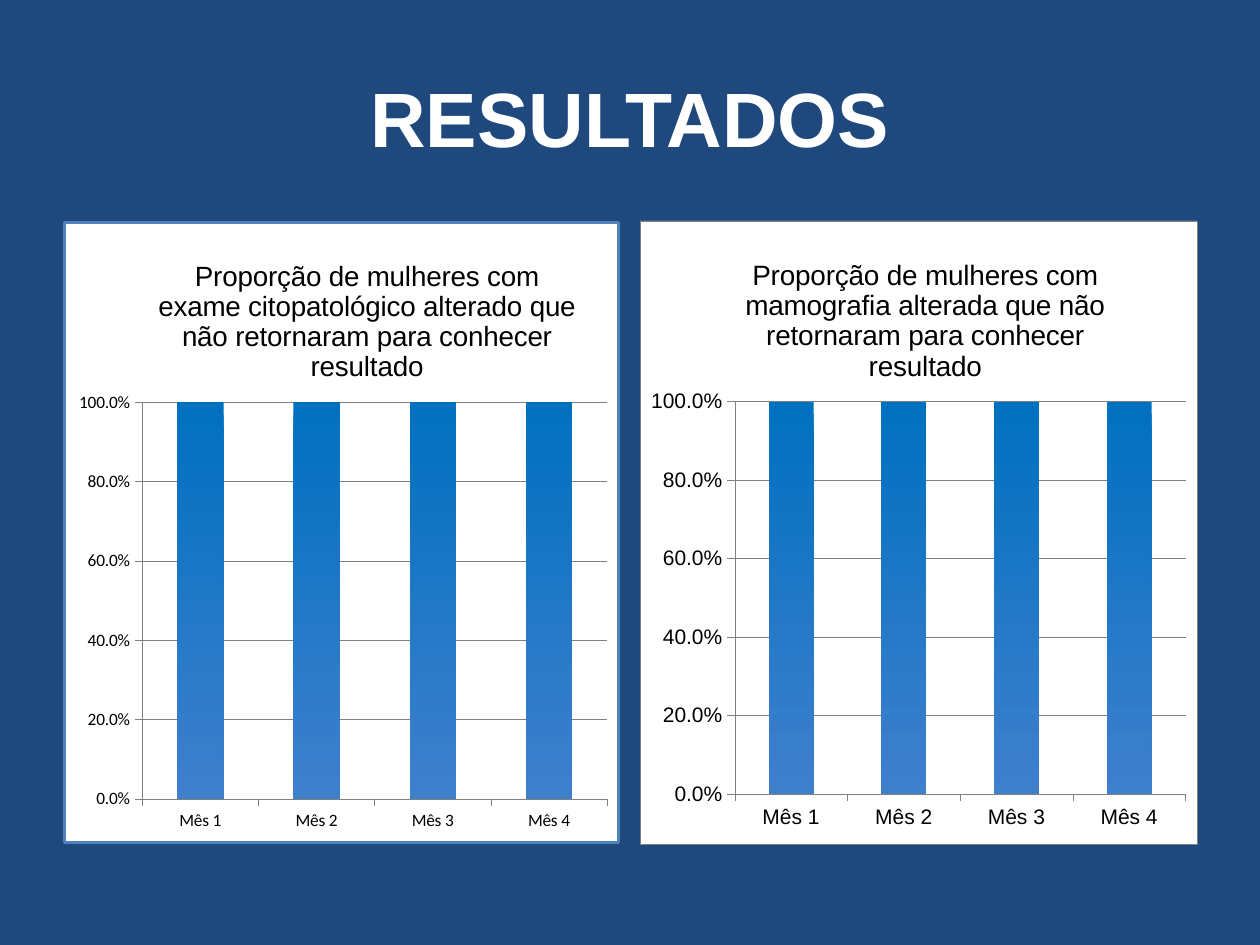
import pptx
import pptx.chart.data
import pptx.dml.color
import pptx.enum.chart
import pptx.enum.text
import pptx.oxml
import pptx.oxml.ns
import pptx.util
from pptx.util import Cm, Pt

NS = pptx.oxml.ns.nsdecls("c", "a")


def rgb(value):
    return pptx.dml.color.RGBColor.from_string(value)


def write(tf, text, size, color, font="Arial", bold=False):
    tf.text = text
    p = tf.paragraphs[0]
    p.alignment = pptx.enum.text.PP_ALIGN.CENTER
    f = p.runs[0].font
    f.name, f.size, f.bold = font, Pt(size), bold
    f.color.rgb = rgb(color)


prs = pptx.Presentation()
prs.slide_width, prs.slide_height = Cm(25.4), Cm(19.05)
s = prs.slides.add_slide(prs.slide_layouts[5])
s.background.fill.solid()
s.background.fill.fore_color.rgb = rgb("1F497D")

title = s.shapes.title
title.left, title.top, title.width, title.height = Cm(1.27), Cm(0.76), Cm(22.86), Cm(3.18)
title.text_frame.vertical_anchor = pptx.enum.text.MSO_ANCHOR.MIDDLE
write(title.text_frame, "RESULTADOS", 44, "FFFFFF", bold=True)

# left, exam, font, size, border colour, border width, title corner, plot box (fractions)
charts = [
    (1.27, "exame citopatológico alterado", "Calibri", 10, "4F81BD", 2,
     (0.16, 0.05), (0.14, 0.29, 0.84, 0.64)),
    (12.9, "mamografia alterada", "Arial", 12, "808080", 0.25,
     (0.18, 0.05), (0.17, 0.29, 0.81, 0.63)),
]
for left, exam, font, size, border, width, corner, box in charts:
    heading = f"Proporção de mulheres com {exam} que não retornaram para conhecer resultado"
    data = pptx.chart.data.CategoryChartData(number_format="0.0%")
    data.categories = [f"Mês {month}" for month in range(1, 5)]
    data.add_series(heading, [1] * 4)
    chart = s.shapes.add_chart(
        pptx.enum.chart.XL_CHART_TYPE.COLUMN_CLUSTERED,
        Cm(left), Cm(4.45), Cm(11.23), Cm(12.57), data).chart
    chart.has_legend = False
    chart.font.name, chart.font.size = font, Pt(size)
    chart.font.color.rgb = rgb("000000")
    chart.has_title = True
    write(chart.chart_title.text_frame, heading, 16, "000000")
    chart.chart_title.include_in_layout = False

    for axis in (chart.category_axis, chart.value_axis):
        axis.major_tick_mark = pptx.enum.chart.XL_TICK_MARK.OUTSIDE
        axis.format.line.color.rgb = rgb("808080")
        axis.format.line.width = Pt(0.25)
    axis = chart.value_axis
    axis.minimum_scale, axis.maximum_scale, axis.major_unit = 0, 1, 0.2
    axis.tick_labels.number_format = "0.0%"
    axis.tick_labels.number_format_is_linked = False
    axis.major_gridlines.format.line.color.rgb = rgb("808080")
    axis.major_gridlines.format.line.width = Pt(0.25)

    plot = chart.plots[0]
    plot.gap_width = 150
    plot.vary_by_categories = False
    fill = plot.series[0].format.fill
    fill.gradient()
    fill.gradient_angle = 270
    for stop, color in zip(fill.gradient_stops, ("0070C0", "3F80CD")):
        stop.color.rgb = rgb(color)

    # White chart and plot areas, with a border round the chart
    white = '<a:solidFill><a:srgbClr val="FFFFFF"/></a:solidFill>'
    line = (f'<a:ln w="{int(Pt(width))}"><a:solidFill><a:srgbClr val="{border}"/>'
            '</a:solidFill></a:ln>')
    c_chart = chart._chartSpace.chart
    c_chart.addnext(pptx.oxml.parse_xml(f"<c:spPr {NS}>{white}{line}</c:spPr>"))
    c_chart.plotArea.append(pptx.oxml.parse_xml(f"<c:spPr {NS}>{white}</c:spPr>"))

    # Fixed places for the title and the plot
    c_title = chart.chart_title._element
    for parent, values, target in ((c_title, corner, ""),
                                   (c_chart.plotArea, box, '<c:layoutTarget val="inner"/>')):
        for old in parent.findall(pptx.oxml.ns.qn("c:layout")):
            parent.remove(old)
        modes = '<c:xMode val="edge"/><c:yMode val="edge"/>'
        places = "".join(f'<c:{k} val="{v}"/>' for k, v in zip("xywh", values))
        layout = pptx.oxml.parse_xml(
            f"<c:layout {NS}><c:manualLayout>{target}{modes}{places}"
            "</c:manualLayout></c:layout>")
        parent.insert(1 if parent is c_title else 0, layout)

prs.save("out.pptx")
